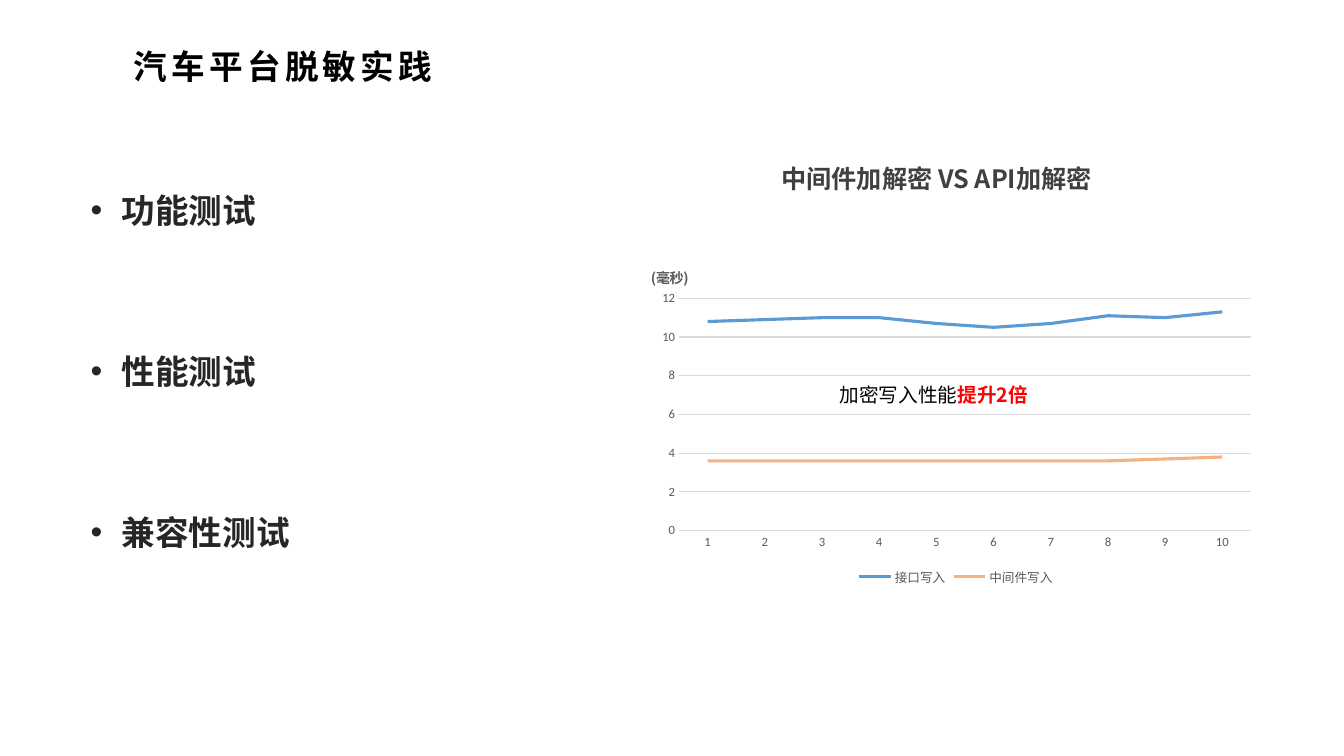
from dataclasses import dataclass

from lxml.etree import SubElement
from pptx import Presentation
from pptx.chart.data import CategoryChartData
from pptx.dml.color import RGBColor
from pptx.enum.chart import XL_CHART_TYPE, XL_LEGEND_POSITION, XL_TICK_MARK
from pptx.enum.text import MSO_ANCHOR
from pptx.oxml import parse_xml
from pptx.oxml.ns import nsdecls, qn
from pptx.util import Inches, Pt


@dataclass(frozen=True)
class Theme:
    cjk_font: str = "Noto Sans CJK SC"
    chart_font: str = "Calibri"
    black: str = "000000"
    body: str = "262626"
    heading: str = "404040"
    label: str = "595959"
    grid: str = "D9D9D9"
    accent: str = "FF0000"
    api_line: str = "5B9BD5"
    middleware_line: str = "F4B183"
    title_size: int = 24
    heading_size: int = 18
    note_size: int = 14
    unit_size: int = 10
    label_size: int = 9


THEME = Theme()
TESTS = ["功能测试", "性能测试", "兼容性测试"]
WRITE_TIMES = [
    ("接口写入", THEME.api_line,
     [10.8, 10.9, 11, 11, 10.7, 10.5, 10.7, 11.1, 11, 11.3]),
    ("中间件写入", THEME.middleware_line,
     [3.6, 3.6, 3.6, 3.6, 3.6, 3.6, 3.6, 3.6, 3.7, 3.8]),
]


def style_font(font, size, color, bold=False, name=THEME.chart_font):
    font.name = name
    font.size = Pt(size)
    font.bold = bold
    font.color.rgb = RGBColor.from_string(color)


def style_run(run, size, color, bold=False, spacing=0):
    style_font(run.font, size, color, bold, THEME.cjk_font)
    properties = run.font._element
    SubElement(properties, qn("a:ea")).set("typeface", THEME.cjk_font)
    if spacing:
        properties.set("spc", str(spacing * 100))


def add_text_area(slide, left, top, width, height, wrap=True):
    area = slide.shapes.add_textbox(
        Inches(left), Inches(top), Inches(width), Inches(height))
    frame = area.text_frame
    frame.word_wrap = wrap
    frame.vertical_anchor = MSO_ANCHOR.MIDDLE
    return frame


def add_line(slide, box, text, size, color, bold=True, spacing=0, wrap=True):
    frame = add_text_area(slide, *box, wrap=wrap)
    frame.text = text
    paragraph = frame.paragraphs[0]
    paragraph.line_spacing = Pt(size * 1.2)
    style_run(paragraph.runs[0], size, color, bold, spacing)
    return paragraph


def add_bullets(slide, box, items):
    frame = add_text_area(slide, *box)
    frame.text = "\n".join(items)
    for index, paragraph in enumerate(frame.paragraphs):
        properties = paragraph._p.get_or_add_pPr()
        properties.set("marL", str(Inches(0.31)))
        properties.set("indent", str(-Inches(0.31)))
        SubElement(properties, qn("a:buFont")).set("typeface", "Arial")
        SubElement(properties, qn("a:buChar")).set("char", "•")
        paragraph.line_spacing = Pt(29)
        if index:
            paragraph.space_before = Pt(86)
        style_run(paragraph.runs[0], THEME.title_size, THEME.body, bold=True)


def place_chart_part(element, position, x, y, size=None):
    """Give a chart part a fixed place, in fractions of the chart."""
    for old_layout in element.findall(qn("c:layout")):
        element.remove(old_layout)
    layout = parse_xml(f"<c:layout {nsdecls('c')}><c:manualLayout/></c:layout>")
    settings = {"xMode": "edge", "yMode": "edge", "x": x, "y": y}
    if size:
        settings = {"layoutTarget": "inner", **settings,
                    "w": size[0], "h": size[1]}
    for tag, value in settings.items():
        SubElement(layout[0], qn(f"c:{tag}")).set("val", str(value))
    element.insert(position, layout)


def style_axis(axis):
    axis.major_tick_mark = XL_TICK_MARK.NONE
    axis.minor_tick_mark = XL_TICK_MARK.NONE
    style_font(axis.tick_labels.font, THEME.label_size, THEME.label)


def style_grid_line(line):
    line.width = Pt(0.75)
    line.color.rgb = RGBColor.from_string(THEME.grid)


def add_write_time_chart(slide, left, top, width, height):
    times = CategoryChartData()
    times.categories = [str(number) for number in range(1, 11)]
    for name, _, values in WRITE_TIMES:
        times.add_series(name, values)
    chart = slide.shapes.add_chart(
        XL_CHART_TYPE.LINE, Inches(left), Inches(top),
        Inches(width), Inches(height), times).chart
    style_font(chart.font, THEME.unit_size, THEME.black)

    # Unit above the value axis
    unit = chart.chart_title
    unit.text_frame.text = "(毫秒)"
    style_run(unit.text_frame.paragraphs[0].runs[0],
              THEME.unit_size, THEME.label, bold=True)
    place_chart_part(unit._element, 1, 0, 0.06)

    # Plot and axes
    plot_area = chart._chartSpace.find(f".//{qn('c:plotArea')}")
    place_chart_part(plot_area, 0, 0.05, 0.16, size=(0.93, 0.67))
    style_axis(chart.category_axis)
    style_grid_line(chart.category_axis.format.line)
    value_axis = chart.value_axis
    style_axis(value_axis)
    value_axis.format.line.fill.background()
    style_grid_line(value_axis.major_gridlines.format.line)
    value_axis.minimum_scale = 0
    value_axis.maximum_scale = 12
    value_axis.major_unit = 2

    # Lines and legend
    for series, (_, color, _) in zip(chart.plots[0].series, WRITE_TIMES):
        series.smooth = False
        series.format.line.width = Pt(2.25)
        series.format.line.color.rgb = RGBColor.from_string(color)
    chart.has_legend = True
    chart.legend.position = XL_LEGEND_POSITION.BOTTOM
    chart.legend.include_in_layout = False
    style_font(chart.legend.font, THEME.label_size, THEME.label)


def main():
    deck = Presentation()
    deck.slide_width = Inches(13.33)
    deck.slide_height = Inches(7.5)
    slide = deck.slides.add_slide(deck.slide_layouts[6])

    # Title and list of tests
    add_line(slide, (1.23, 0.41, 9.25, 0.5), "汽车平台脱敏实践",
             THEME.title_size, THEME.black, spacing=3)
    add_bullets(slide, (0.8, 1.81, 3.57, 3.74), TESTS)

    # Performance comparison
    add_write_time_chart(slide, 6.43, 2.41, 6.1, 3.44)
    finding = add_line(slide, (8.23, 3.75, 3.53, 0.34), "加密写入性能",
                       THEME.note_size, THEME.black, bold=False)
    gain = finding.add_run()
    gain.text = "提升2倍"
    style_run(gain, THEME.note_size, THEME.accent, bold=True)
    add_line(slide, (7.65, 1.57, 3.47, 0.4), "中间件加解密 VS API加解密",
             THEME.heading_size, THEME.heading, wrap=False)

    deck.save("out.pptx")


if __name__ == "__main__":
    main()
